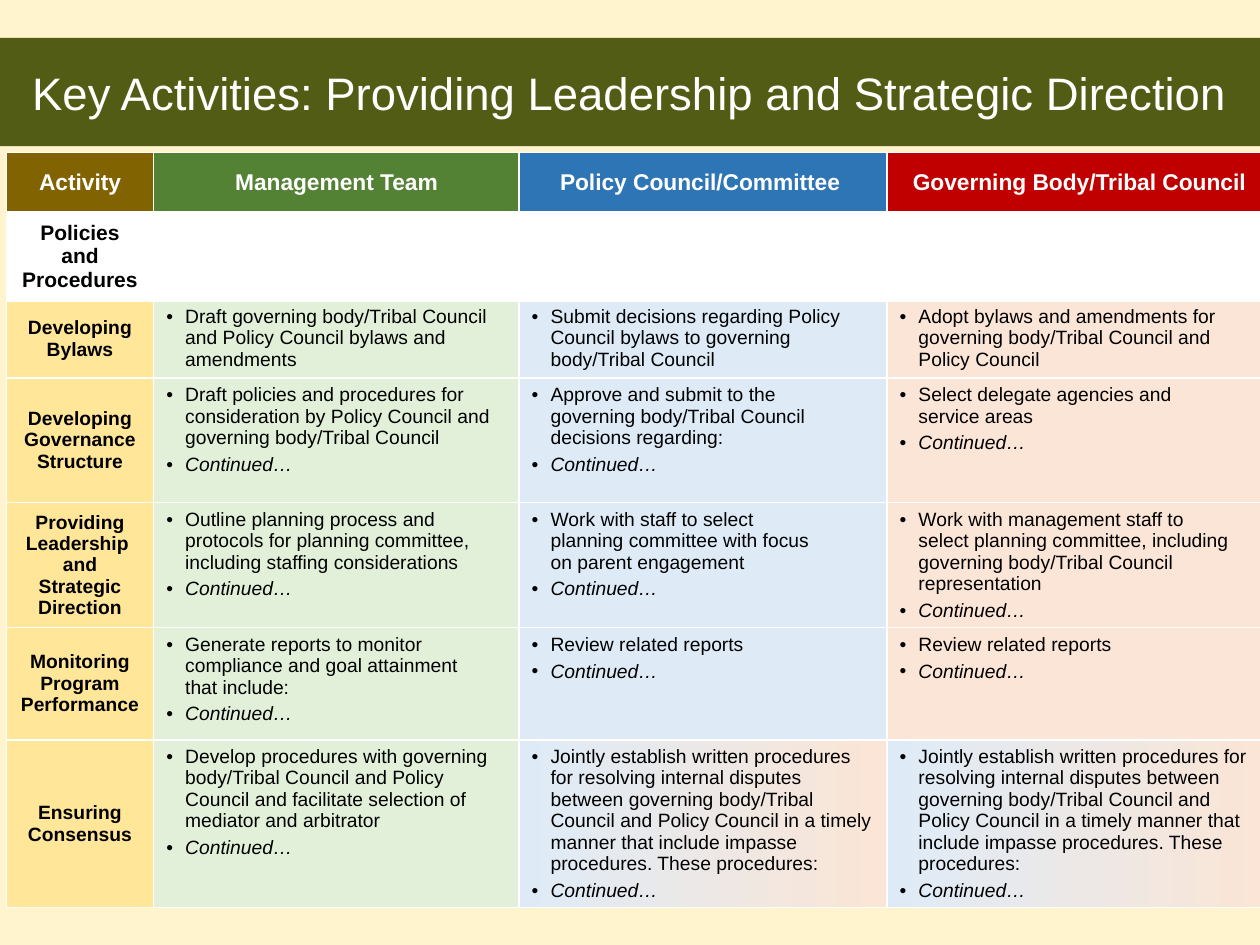
from lxml import etree
from pptx import Presentation
from pptx.dml.color import RGBColor
from pptx.enum import shapes, text
from pptx.oxml.ns import qn
from pptx.util import Inches, Pt

WHITE = RGBColor(0xFF, 0xFF, 0xFF)
BLACK = RGBColor(0, 0, 0)
CREAM = RGBColor(0xFF, 0xF4, 0xCE)
OLIVE = RGBColor(0x53, 0x5C, 0x14)
GOLD = RGBColor(0xFF, 0xE6, 0x99)
PALE_GREEN = RGBColor(0xE2, 0xF0, 0xD9)
PALE_BLUE = RGBColor(0xDE, 0xEB, 0xF7)
PALE_ORANGE = RGBColor(0xFB, 0xE5, 0xD6)
BLEND = (PALE_BLUE, PALE_ORANGE)
HEADER_FILLS = [RGBColor(0x81, 0x63, 0x01), RGBColor(0x54, 0x82, 0x35),
                RGBColor(0x2E, 0x75, 0xB6), RGBColor(0xC0, 0, 0)]
BODY_FILLS = [GOLD, PALE_GREEN, PALE_BLUE, PALE_ORANGE]
CONSENSUS_FILLS = [GOLD, PALE_GREEN, BLEND, BLEND]
FONT = "Arial"

TITLE = "Key Activities: Providing Leadership and Strategic Direction"
HEADERS = ["Activity", "Management Team", "Policy Council/Committee ",
           "Governing Body/Tribal Council"]
SECTION = "Policies and Procedures"
MORE = "Continued…"
DISPUTES = ("Jointly establish written procedures for resolving internal disputes between "
            "governing body/Tribal Council and Policy Council in a timely manner that include "
            "impasse procedures. These procedures:")
# Each activity: its name as paragraphs, then the bullets of the three bodies
ACTIVITIES = [
    (["Developing Bylaws"],
     ["Draft governing body/Tribal Council and Policy Council bylaws and amendments"],
     ["Submit decisions regarding Policy Council bylaws to governing body/Tribal Council"],
     ["Adopt bylaws and amendments for governing body/Tribal Council and Policy Council"]),
    (["Developing Governance", "Structure"],
     ["Draft policies and procedures for consideration by Policy Council and "
      "governing body/Tribal Council", MORE],
     ["Approve and submit to the \vgoverning body/Tribal Council decisions regarding:", MORE],
     ["Select delegate agencies and \vservice areas", MORE]),
    (["Providing Leadership \vand Strategic Direction"],
     ["Outline planning process and protocols for planning committee, "
      "including staffing considerations", MORE],
     ["Work with staff to select \vplanning committee with focus \von parent engagement", MORE],
     ["Work with management staff to \vselect planning committee, including "
      "governing body/Tribal Council representation", MORE]),
    (["Monitoring Program Performance"],
     ["Generate reports to monitor compliance and goal attainment \vthat include:", MORE],
     ["Review related reports", MORE],
     ["Review related reports", MORE]),
    (["Ensuring Consensus"],
     ["Develop procedures with governing body/Tribal Council and Policy Council and "
      "facilitate selection of mediator and arbitrator", MORE],
     [DISPUTES, MORE],
     [DISPUTES, MORE]),
]
COLUMN_WIDTHS = [1.17, 2.9, 2.92, 3.05]
ROW_HEIGHTS = [0.48, 0.69, 0.62, 0.99, 0.99, 0.89, 1.33]


def set_font(paragraph, size, color, bold=False, italic=False):
    font = paragraph.font
    font.name, font.size, font.bold, font.italic = FONT, Pt(size), bold, italic
    font.color.rgb = color


def add_bullet(paragraph):
    properties = paragraph._p.get_or_add_pPr()
    properties.set("marL", str(Inches(0.15)))
    properties.set("indent", str(-Inches(0.15)))
    etree.SubElement(properties, qn("a:buFont"), typeface=FONT)
    etree.SubElement(properties, qn("a:buChar"), char="•")


def set_borders(cell, top, bottom):
    properties = cell._tc.get_or_add_tcPr()
    sides = [("L", 1), ("R", 1), ("T", top), ("B", bottom)]
    for position, (side, width) in enumerate(sides):
        line = etree.Element(qn(f"a:ln{side}"), w=str(Pt(width)))
        solid = etree.SubElement(line, qn("a:solidFill"))
        etree.SubElement(solid, qn("a:srgbClr"), val=str(WHITE))
        properties.insert(position, line)


def set_fill(fill, color):
    """Fill with one colour, or with a left-to-right blend of a pair."""
    if color is not BLEND:
        fill.solid()
        fill.fore_color.rgb = color
        return
    fill.gradient()
    fill.gradient_angle = 0
    for stop, shade, position in zip(fill.gradient_stops, color, (0, 0.99)):
        stop.color.rgb = shade
        stop.position = position


def write_heading(cell, lines, size, color):
    cell.vertical_anchor = text.MSO_ANCHOR.MIDDLE
    frame = cell.text_frame
    for index, line in enumerate(lines):
        paragraph = frame.add_paragraph() if index else frame.paragraphs[0]
        paragraph.text = line
        paragraph.alignment = text.PP_ALIGN.CENTER
        set_font(paragraph, size, color, bold=True)


def write_bullets(cell, bullets):
    frame = cell.text_frame
    for index, bullet in enumerate(bullets):
        paragraph = frame.add_paragraph() if index else frame.paragraphs[0]
        paragraph.text = bullet
        if bullet is not bullets[-1]:
            paragraph.space_after = Pt(3)
        add_bullet(paragraph)
        set_font(paragraph, 11, BLACK, italic=bullet == MORE)


def add_title(slide, width):
    banner = slide.shapes.add_shape(shapes.MSO_SHAPE.RECTANGLE, 0, Inches(0.3),
                                    width, Inches(0.86))
    banner.shadow.inherit = False
    set_fill(banner.fill, OLIVE)
    banner.line.fill.background()
    banner.text_frame.vertical_anchor = text.MSO_ANCHOR.MIDDLE
    heading = banner.text_frame.paragraphs[0]
    heading.text = TITLE
    heading.alignment = text.PP_ALIGN.CENTER
    set_font(heading, 26, WHITE)


def add_activity_table(slide):
    table = slide.shapes.add_table(
        len(ROW_HEIGHTS), len(COLUMN_WIDTHS), Inches(0.05), Inches(1.21),
        Inches(sum(COLUMN_WIDTHS)), Inches(sum(ROW_HEIGHTS))).table
    table.first_row = table.horz_banding = False
    for column, width in zip(table.columns, COLUMN_WIDTHS):
        column.width = Inches(width)
    for row, height in zip(table.rows, ROW_HEIGHTS):
        row.height = Inches(height)

    for column, header in enumerate(HEADERS):
        write_heading(table.cell(0, column), [header], 13, WHITE)
    write_heading(table.cell(1, 0), [SECTION], 12, BLACK)
    for row, (activity, *bodies) in enumerate(ACTIVITIES, start=2):
        write_heading(table.cell(row, 0), activity, 11, BLACK)
        for column, bullets in enumerate(bodies, start=1):
            write_bullets(table.cell(row, column), bullets)

    fills = [HEADER_FILLS, [WHITE] * 4] + [BODY_FILLS] * 4 + [CONSENSUS_FILLS]
    for row, row_fills in enumerate(fills):
        for column, color in enumerate(row_fills):
            cell = table.cell(row, column)
            set_fill(cell.fill, color)
            set_borders(cell, top=3 if row in (1, 2) else 1, bottom=3 if row < 2 else 1)


def main():
    deck = Presentation()
    deck.slide_width, deck.slide_height = Inches(10), Inches(7.5)
    slide = deck.slides.add_slide(deck.slide_layouts[6])
    set_fill(slide.background.fill, CREAM)
    add_title(slide, deck.slide_width)
    add_activity_table(slide)
    deck.save("out.pptx")


if __name__ == "__main__":
    main()
